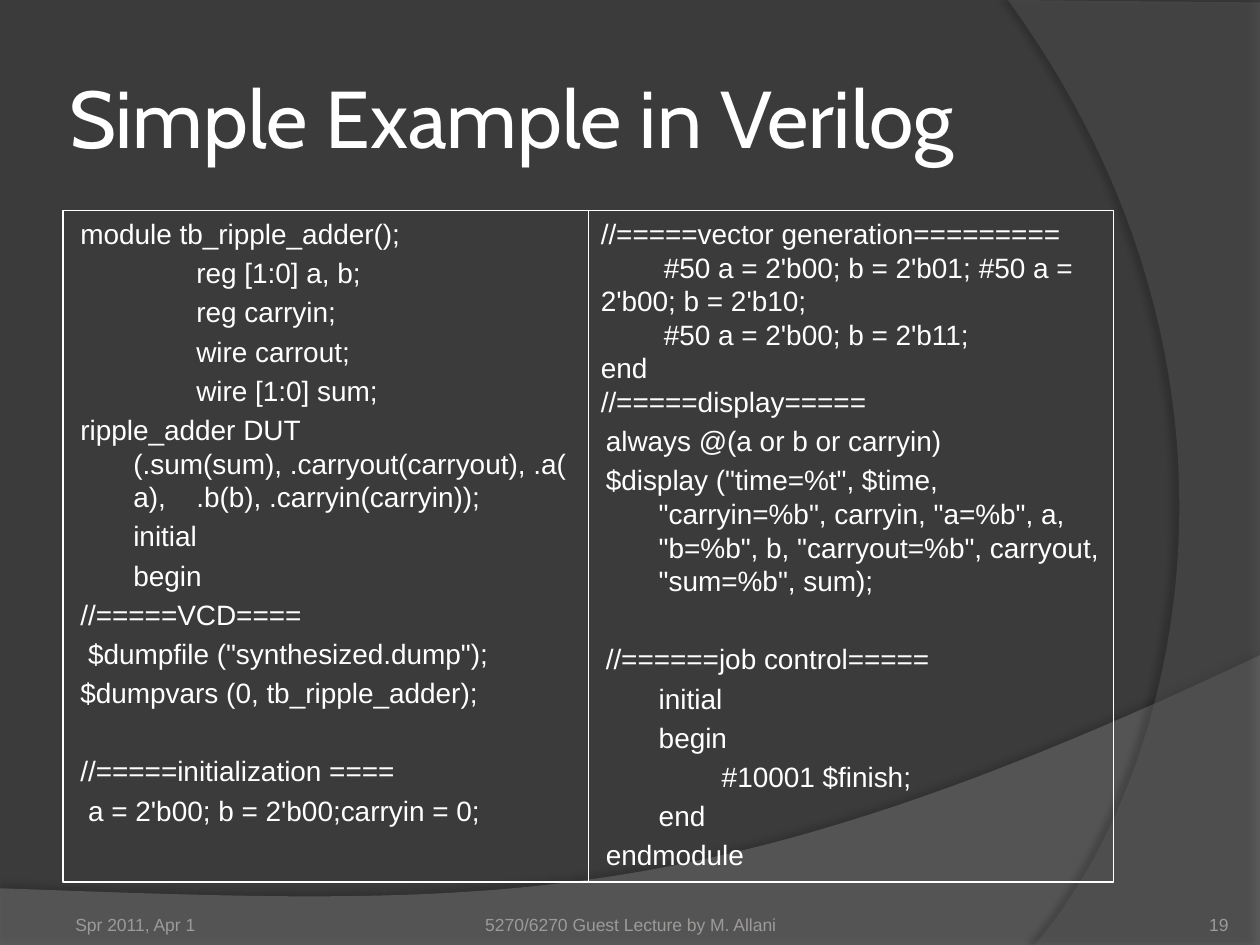
from lxml.etree import SubElement
from pptx import Presentation
from pptx.dml.color import RGBColor
from pptx.enum.shapes import MSO_SHAPE
from pptx.enum.text import MSO_ANCHOR, PP_ALIGN
from pptx.oxml.ns import qn
from pptx.util import Inches, Pt

COLORS = {
    "background": "3B3B3B", "wave": "7F7F7F", "arc": "5E5E5E",
    "text": "FFFFFF", "border": "FFFFFF", "footer": "9D9B9A", "shadow": "000000",
}
HANGING = {"marL": Inches(0.46), "indent": Inches(-0.42)}
FLUSH = {"marL": 0, "indent": 0}
CODE_SPACE = 3.2
BLOCK_SPACE = 25.6

TESTBENCH = [
    ("module tb_ripple_adder();", HANGING, CODE_SPACE),
    ("\t\treg [1:0] a, b;", HANGING, CODE_SPACE),
    ("\t\treg carryin;", HANGING, CODE_SPACE),
    ("\t\twire carrout;", HANGING, CODE_SPACE),
    ("\t\twire [1:0] sum;", HANGING, CODE_SPACE),
    ("ripple_adder DUT (.sum(sum), .carryout(carryout), .a(a), \t.b(b), .carryin(carryin));",
     HANGING, CODE_SPACE),
    ("\tinitial", HANGING, CODE_SPACE),
    ("\tbegin", HANGING, CODE_SPACE),
    ("//=====VCD====", HANGING, CODE_SPACE),
    (" $dumpfile (\"synthesized.dump\");", HANGING, CODE_SPACE),
    ("$dumpvars (0, tb_ripple_adder);", HANGING, CODE_SPACE),
    ("//=====initialization ====", HANGING, BLOCK_SPACE),
    (" a = 2'b00; b = 2'b00;carryin = 0;", HANGING, CODE_SPACE),
]
STIMULUS = [
    ("//=====vector generation=========", FLUSH, 0),
    ("\t#50 a = 2'b00; b = 2'b01;\t#50 a = 2'b00; b = 2'b10;", FLUSH, 0),
    ("\t#50 a = 2'b00; b = 2'b11;", FLUSH, 0),
    ("end", FLUSH, 0),
    ("//=====display=====", FLUSH, 0),
    ("always @(a or b or carryin)", HANGING, CODE_SPACE),
    ("$display (\"time=%t\", $time, \"carryin=%b\", carryin, \"a=%b\", a, \"b=%b\", b, "
     "\"carryout=%b\", carryout, \"sum=%b\", sum);", HANGING, CODE_SPACE),
    ("//======job control=====", HANGING, BLOCK_SPACE),
    ("\tinitial", HANGING, CODE_SPACE),
    ("\tbegin", HANGING, CODE_SPACE),
    ("\t\t#10001 $finish;", HANGING, CODE_SPACE),
    ("\tend", HANGING, CODE_SPACE),
    ("endmodule", HANGING, CODE_SPACE),
]


def color(name):
    """Return the named palette colour."""
    return RGBColor.from_string(COLORS[name])


def bezier(start, control_1, control_2, end, steps=48):
    """Return evenly stepped points along a cubic curve."""
    points = []
    for step in range(steps + 1):
        t = step / steps
        weights = ((1 - t) ** 3, 3 * t * (1 - t) ** 2, 3 * t * t * (1 - t), t ** 3)
        points.append(tuple(
            sum(w * p for w, p in zip(weights, axis))
            for axis in zip(start, control_1, control_2, end)))
    return points


def add_swoosh(slide, points, fill, opacity, shadow_opacity, distance, direction):
    """Draw a translucent background outline with a soft shadow."""
    outline = [(Inches(x), Inches(y)) for x, y in points]
    builder = slide.shapes.build_freeform(*outline[0])
    builder.add_line_segments(outline[1:], close=True)
    swoosh = builder.convert_to_shape()
    swoosh.fill.solid()
    swoosh.fill.fore_color.rgb = color(fill)
    swoosh.line.fill.background()
    swoosh.shadow.inherit = False
    properties = swoosh.element.spPr
    fill_color = properties.find(qn("a:solidFill")).find(qn("a:srgbClr"))
    SubElement(fill_color, qn("a:alpha"), val=str(opacity * 1000))
    shadow = SubElement(
        properties.find(qn("a:effectLst")), qn("a:outerShdw"), blurRad=str(Pt(4)),
        dist=str(Pt(distance)), dir=str(direction * 60000), algn="ctr", rotWithShape="0")
    shadow_color = SubElement(shadow, qn("a:srgbClr"), val=COLORS["shadow"])
    SubElement(shadow_color, qn("a:alpha"), val=str(shadow_opacity * 1000))


def add_background(slide):
    """Fill the slide and draw the wave and the arc."""
    slide.background.fill.solid()
    slide.background.fill.fore_color.rgb = color("background")
    wave = bezier((10, 5.2), (5.59, 7.29), (3.91, 7.19), (0, 7.05))
    add_swoosh(slide, wave + [(0, 7.51), (10, 7.51)], "wave", 45, 35, 3.5, 270)
    arc = bezier((8.21, 7.5), (9.35, 6.19), (10.18, 3), (8, 0))
    add_swoosh(slide, arc + [(10, 0.02), (10, 7.5)], "arc", 40, 45, 4, 180)


def set_frame(frame, anchor, insets):
    """Set wrapping, anchor and left, top, right, bottom insets."""
    left, top, right, bottom = map(Inches, insets)
    layout = {"word_wrap": True, "vertical_anchor": anchor, "margin_left": left,
              "margin_top": top, "margin_right": right, "margin_bottom": bottom}
    for name, value in layout.items():
        setattr(frame, name, value)


def write(paragraph, text, size, font, color_name, align=PP_ALIGN.LEFT):
    """Write one formatted run into a paragraph."""
    paragraph.alignment = align
    run = paragraph.add_run()
    run.text = text
    for name, value in {"size": Pt(size), "name": font}.items():
        setattr(run.font, name, value)
    run.font.color.rgb = color(color_name)


def add_title(slide, box, text):
    """Place and format the title placeholder."""
    title = slide.shapes.title
    for name, value in zip(("left", "top", "width", "height"), box):
        setattr(title, name, Inches(value))
    set_frame(title.text_frame, MSO_ANCHOR.MIDDLE, (0.05,) * 4)
    write(title.text_frame.paragraphs[0], text, 46, "Cabin", "text")


def add_code_panel(slide, box, lines):
    """Draw a bordered panel holding lines of code."""
    panel = slide.shapes.add_shape(MSO_SHAPE.RECTANGLE, *map(Inches, box))
    panel.shadow.inherit = False
    panel.fill.background()
    panel.line.color.rgb = color("border")
    panel.line.width = Pt(0.75)
    frame = panel.text_frame
    set_frame(frame, MSO_ANCHOR.TOP, (0.1, 0.05, 0.1, 0.05))
    for number, (code, indents, space) in enumerate(lines):
        paragraph = frame.add_paragraph() if number else frame.paragraphs[0]
        write(paragraph, code, 16, "Arial", "text")
        paragraph.space_before = Pt(space if number else 0)
        for name, value in indents.items():
            paragraph._p.get_or_add_pPr().set(name, str(value))


def add_footer(slide, box, text, align, insets):
    """Add one footer text at the bottom of its box."""
    footer = slide.shapes.add_textbox(*map(Inches, box))
    set_frame(footer.text_frame, MSO_ANCHOR.BOTTOM, insets)
    write(footer.text_frame.paragraphs[0], text, 10, "Arial", "footer", align)


def main():
    """Build and save the slide."""
    deck = Presentation()
    deck.slide_width, deck.slide_height = Inches(10), Inches(7.5)
    slide = deck.slides.add_slide(deck.slide_layouts[5])
    add_background(slide)
    add_title(slide, (0.5, 0.3, 8.17, 1.25), "Simple Example in Verilog")
    left, width = 0.5, 4.17
    for column, lines in enumerate((TESTBENCH, STIMULUS)):
        add_code_panel(slide, (left + column * width, 1.67, width, 5.33), lines)
    footers = [
        (0.5, 2.33, "Spr 2011, Apr 1", PP_ALIGN.LEFT, (0.1, 0.05, 0.1, 0)),
        (3.42, 3.17, "5270/6270 Guest Lecture by M. Allani", PP_ALIGN.CENTER, (0, 0.05, 0, 0)),
        (8.92, 0.83, "19", PP_ALIGN.RIGHT, (0, 0, 0, 0)),
    ]
    for x, footer_width, text, align, insets in footers:
        add_footer(slide, (x, 7.02, footer_width, 0.4), text, align, insets)
    deck.save("out.pptx")


if __name__ == "__main__":
    main()
